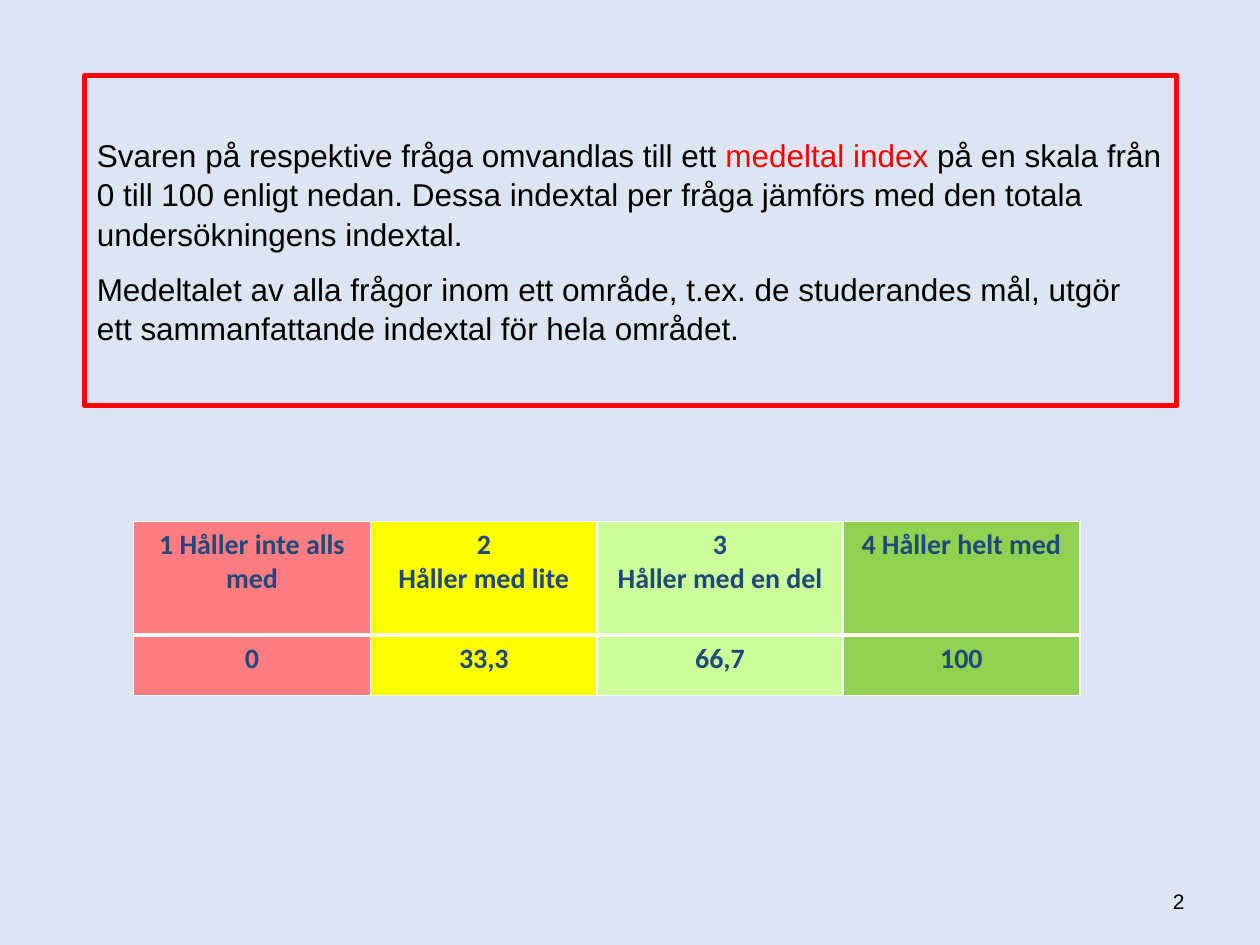
from dataclasses import dataclass

from lxml import etree
from pptx import Presentation
from pptx.dml.color import RGBColor
from pptx.enum.shapes import MSO_SHAPE
from pptx.enum.text import MSO_ANCHOR, PP_ALIGN
from pptx.oxml.ns import qn
from pptx.util import Inches, Pt

RECTANGLE = MSO_SHAPE.RECTANGLE
MIDDLE = MSO_ANCHOR.MIDDLE
LEFT, CENTER, RIGHT = PP_ALIGN.LEFT, PP_ALIGN.CENTER, PP_ALIGN.RIGHT
BLANK_LAYOUT = 6


@dataclass(frozen=True)
class Theme:
    background: str = "DCE6F2"
    text: str = "000000"
    accent: str = "FF0000"
    table_text: str = "1F497D"
    table_border: str = "FFFFFF"
    body_font: str = "Arial"
    table_font: str = "Calibri"
    body_size: int = 18
    table_size: int = 16
    number_size: int = 12


class SlideBuilder:
    def __init__(self, presentation, theme):
        self.theme = theme
        self.slide = presentation.slides.add_slide(presentation.slide_layouts[BLANK_LAYOUT])
        fill = self.slide.background.fill
        fill.solid()
        fill.fore_color.rgb = RGBColor.from_string(theme.background)

    def format_run(self, run, font, size, color, bold=False):
        run.font.name = font
        run.font.size = Pt(size)
        run.font.bold = bold
        run.font.color.rgb = RGBColor.from_string(color)

    def framed_text(self, left, top, width, height, paragraphs):
        theme = self.theme
        shape = self.slide.shapes.add_shape(
            RECTANGLE, Inches(left), Inches(top), Inches(width), Inches(height))
        shape.shadow.inherit = False
        shape.fill.background()
        shape.line.color.rgb = RGBColor.from_string(theme.accent)
        shape.line.width = Pt(3)
        frame = shape.text_frame
        frame.word_wrap = True
        frame.vertical_anchor = MIDDLE
        for index, parts in enumerate(paragraphs):
            paragraph = frame.add_paragraph() if index else frame.paragraphs[0]
            paragraph.alignment = LEFT
            paragraph.line_spacing = 1.04
            if index:
                paragraph.space_before = Pt(theme.body_size / 2)
            for text, color in parts:
                run = paragraph.add_run()
                run.text = text
                self.format_run(run, theme.body_font, theme.body_size, color)

    def set_border(self, cell, side, width):
        properties = cell._tc.get_or_add_tcPr()
        line = etree.SubElement(properties, qn(f"a:ln{side}"), w=str(Pt(width)))
        fill = etree.SubElement(line, qn("a:solidFill"))
        etree.SubElement(fill, qn("a:srgbClr"), val=self.theme.table_border)

    def table(self, left, top, widths, heights, rows, fills):
        theme = self.theme
        table = self.slide.shapes.add_table(
            len(rows), len(widths), Inches(left), Inches(top),
            Inches(sum(widths)), Inches(sum(heights))).table
        for column, width in zip(table.columns, widths):
            column.width = Inches(width)
        for row, height in zip(table.rows, heights):
            row.height = Inches(height)
        for row_index, texts in enumerate(rows):
            # A heavier rule separates the header from the values
            rules = {"L": 1, "R": 1, "T": 3 if row_index else 1, "B": 1 if row_index else 3}
            for column_index, (text, color) in enumerate(zip(texts, fills)):
                cell = table.cell(row_index, column_index)
                for side, width in rules.items():
                    self.set_border(cell, side, width)
                cell.fill.solid()
                cell.fill.fore_color.rgb = RGBColor.from_string(color)
                cell.text_frame.text = text
                for paragraph in cell.text_frame.paragraphs:
                    paragraph.alignment = CENTER
                    for run in paragraph.runs:
                        self.format_run(run, theme.table_font, theme.table_size,
                                        theme.table_text, bold=True)

    def page_number(self, left, top, width, height, number):
        box = self.slide.shapes.add_textbox(
            Inches(left), Inches(top), Inches(width), Inches(height))
        frame = box.text_frame
        frame.word_wrap = True
        frame.vertical_anchor = MIDDLE
        frame.text = number
        paragraph = frame.paragraphs[0]
        paragraph.alignment = RIGHT
        self.format_run(paragraph.runs[0], self.theme.body_font,
                        self.theme.number_size, self.theme.text)


def main():
    presentation = Presentation()
    presentation.slide_width = Inches(10)
    presentation.slide_height = Inches(7.5)
    theme = Theme()
    builder = SlideBuilder(presentation, theme)

    # Explanation of the index
    builder.framed_text(0.67, 0.6, 8.67, 2.62, [
        [("Svaren på respektive fråga omvandlas till ett ", theme.text),
         ("medeltal index ", theme.accent),
         ("på en skala från 0 till 100 enligt nedan. Dessa indextal per fråga "
          "jämförs med den totala undersökningens indextal.", theme.text)],
        [("Medeltalet av alla frågor inom ett område, t.ex. de studerandes mål, "
          "utgör ett sammanfattande indextal för hela området.", theme.text)],
    ])

    # Answer scale and index values
    builder.table(
        1.06, 4.14, [1.88, 1.8, 1.95, 1.88], [0.9, 0.48],
        [["1 Håller inte alls med", "2\nHåller med lite",
          "3\nHåller med en del", "4 Håller helt med"],
         ["0", "33,3", "66,7", "100"]],
        ["FF7C80", "FFFF00", "CCFF99", "92D050"])

    # Slide number
    builder.page_number(7.17, 6.95, 2.33, 0.4, "2")
    presentation.save("out.pptx")


if __name__ == "__main__":
    main()
